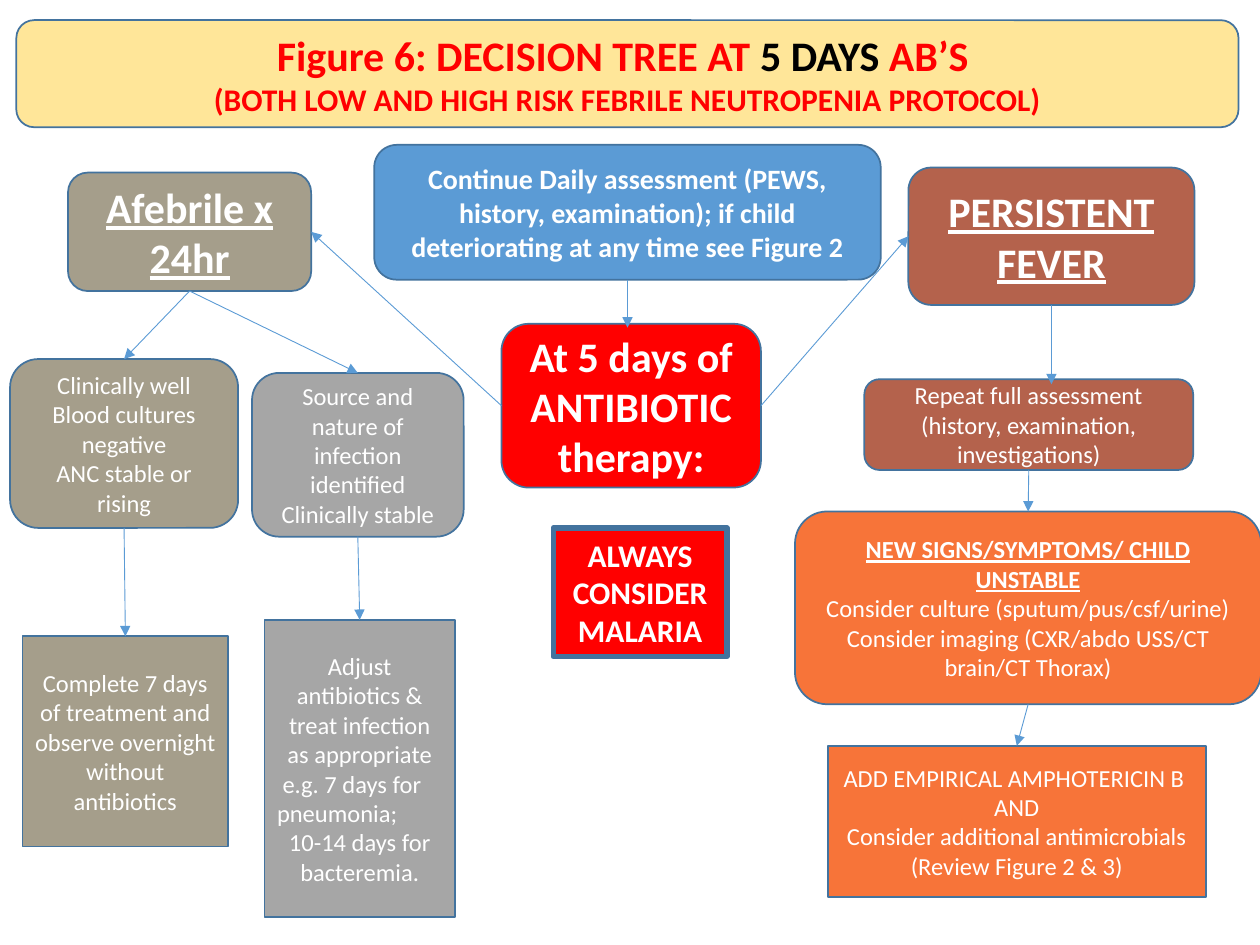
from lxml.etree import SubElement
from pptx import Presentation
from pptx.dml.color import RGBColor
from pptx.enum.shapes import MSO_CONNECTOR, MSO_SHAPE
from pptx.enum.text import MSO_ANCHOR, MSO_AUTO_SIZE, PP_ALIGN
from pptx.oxml.ns import qn
from pptx.util import Inches, Pt

WHITE = RGBColor(0xFF, 0xFF, 0xFF)
BLACK = RGBColor(0, 0, 0)
RED = RGBColor(0xFF, 0, 0)
CREAM = RGBColor(0xFF, 0xE6, 0x99)
BLUE = RGBColor(0x5B, 0x9B, 0xD5)
NAVY = RGBColor(0x43, 0x73, 0x9E)
TAUPE = RGBColor(0xA5, 0x9E, 0x8B)
GREY = RGBColor(0xA6, 0xA6, 0xA6)
BRICK = RGBColor(0xB4, 0x62, 0x4C)
ORANGE = RGBColor(0xF7, 0x74, 0x39)

COLS, ROWS = 100, 75
CELL = Inches(0.1)
ROUND, RECT = MSO_SHAPE.ROUNDED_RECTANGLE, MSO_SHAPE.RECTANGLE


def cells(*counts):
    """Turn counts of grid cells into lengths."""
    return [round(n * CELL) for n in counts]


def write(para, words, size=14, color=WHITE, bold=False, line=False,
          align=PP_ALIGN.CENTER):
    """Add one formatted run to a paragraph."""
    para.alignment = align
    run = para.add_run()
    run.text = words
    font = run.font
    font.name, font.size, font.bold = "Calibri", Pt(size), bold
    font.underline = line
    font.color.rgb = color


def fill(shape, paras, **style):
    """Write paragraphs, each a string or a list of (words, changes) runs."""
    frame = shape.text_frame
    frame.word_wrap = True
    frame.vertical_anchor = MSO_ANCHOR.MIDDLE
    for i, runs in enumerate(paras):
        para = frame.paragraphs[0] if i == 0 else frame.add_paragraph()
        for words, diff in [(runs, {})] if isinstance(runs, str) else runs:
            write(para, words, **{**style, **diff})


def node(slide, box, place, color, paras, kind=ROUND, edge=1, **style):
    """Draw a filled box at a place counted from the corner of its region."""
    x, y, w, h = place
    shape = slide.shapes.add_shape(kind, *cells(box[0] + x, box[1] + y, w, h))
    shape.shadow.inherit = False
    shape.fill.solid()
    shape.fill.fore_color.rgb = color
    shape.line.color.rgb = NAVY
    shape.line.width = Pt(edge)
    fill(shape, paras, **style)
    return shape


def join(slide, start, goal, out=2, into=0, drop=0):
    """Draw an arrow between two boxes, or straight down by some rows."""
    line = slide.shapes.add_connector(MSO_CONNECTOR.STRAIGHT, 0, 0, 0, 0)
    line.begin_connect(start, out)
    if drop:
        line.end_x = line.begin_x
        line.end_y = line.begin_y + cells(drop)[0]
    else:
        line.end_connect(goal, into)
    line.line.color.rgb = BLUE
    line.line.width = Pt(0.5)
    SubElement(line.line._get_or_add_ln(), qn("a:tailEnd"), type="triangle")
    SubElement(line.element.spPr, qn("a:effectLst"))


def header(slide, box):
    """Place the title on its banner."""
    title = slide.shapes.title
    banner = node(slide, box, (0, 0, *box[2:]), CREAM, [])
    title.element.addprevious(banner.element)
    title.left, title.top, title.width, title.height = cells(*box)
    title.text_frame.auto_size = MSO_AUTO_SIZE.NONE
    fill(title, [
        [("Figure 6: DECISION TREE AT ", {}), ("5 DAYS ", {"color": BLACK}),
         ("AB’S ", {})],
        [("(BOTH LOW AND HIGH RISK FEBRILE NEUTROPENIA PROTOCOL)",
          {"size": 18})],
    ], size=24, color=RED, bold=True)


def centre(slide, box):
    """Draw the daily check, the start of the tree and the warning."""
    daily = node(slide, box, (0, 0, box[2], 10.7), BLUE, [
        "Continue Daily assessment (PEWS, history, examination); "
        "if child deteriorating at any time see Figure 2"],
        size=16, bold=True)
    root = node(slide, box, (10.1, 14.2, 20.6, 13), RED,
                ["At 5 days of ANTIBIOTIC therapy:"], size=24, bold=True)
    node(slide, box, (14.2, 30.4, 13.8, 10.2), RED,
         ["ALWAYS CONSIDER MALARIA"], RECT, 3, size=18, bold=True)
    join(slide, daily, root, drop=3.8)
    return root


def afebrile(slide, box):
    """Draw the branch for a child without fever."""
    head = node(slide, box, (4.6, 0, 19.3, 9.4), TAUPE, ["Afebrile x 24hr"],
                size=24, bold=True, line=True)
    well = node(slide, box, (0, 14.8, 18.1, 13.4), TAUPE, [
        "Clinically well", "Blood cultures negative", "ANC stable or rising"])
    source = node(slide, box, (19.2, 15.9, 16.8, 13), GREY, [
        "Source and nature of infection identified", "Clinically stable"])
    finish = node(slide, box, (1, 36.8, 16.3, 16.7), TAUPE, [
        "Complete 7 days of treatment and observe overnight "
        "without antibiotics"], RECT)
    adjust = node(slide, box, (20.2, 35.5, 15.1, 23.6), GREY, [
        "Adjust antibiotics & treat infection as appropriate",
        [(" e.g. 7 days for pneumonia;", {"align": PP_ALIGN.LEFT})],
        "10-14 days for bacteremia."], RECT)
    for start, goal in ((head, well), (head, source), (well, finish),
                        (source, adjust)):
        join(slide, start, goal)
    return head


def fever(slide, box):
    """Draw the branch for a child with lasting fever."""
    head = node(slide, box, (9, 0, 22.7, 10.9), BRICK, ["PERSISTENT FEVER"],
                size=24, bold=True, line=True)
    again = node(slide, box, (5.5, 16.8, 26.1, 7.2), BRICK, [
        "Repeat full assessment (history, examination, investigations)"])
    signs = node(slide, box, (0, 27.3, box[2], 15.3), ORANGE, [
        [("NEW SIGNS/SYMPTOMS/ CHILD UNSTABLE", {"bold": True, "line": True})],
        "Consider culture (sputum/pus/csf/urine)",
        "Consider imaging (CXR/abdo USS/CT brain/CT Thorax)"])
    add = node(slide, box, (2.6, 45.9, 30, 12), ORANGE, [
        "ADD EMPIRICAL AMPHOTERICIN B ", "AND",
        "Consider additional antimicrobials", "(Review Figure 2 & 3)"], RECT)
    join(slide, head, again, drop=6.3)
    join(slide, again, signs)
    join(slide, signs, add)
    return head


def main():
    """Build the slide and save it."""
    deck = Presentation()
    deck.slide_width, deck.slide_height = cells(COLS, ROWS)
    slide = deck.slides.add_slide(deck.slide_layouts[5])
    header(slide, (1.3, 1.6, 97, 8.5))
    root = centre(slide, (29.7, 11.5, 40.2, 40.6))
    left = afebrile(slide, (0.8, 13.7, 36, 59.1))
    right = fever(slide, (63.1, 13.3, 37, 57.9))
    join(slide, root, left, 1, 3)
    join(slide, root, right, 3, 1)
    deck.save("out.pptx")


if __name__ == "__main__":
    main()
